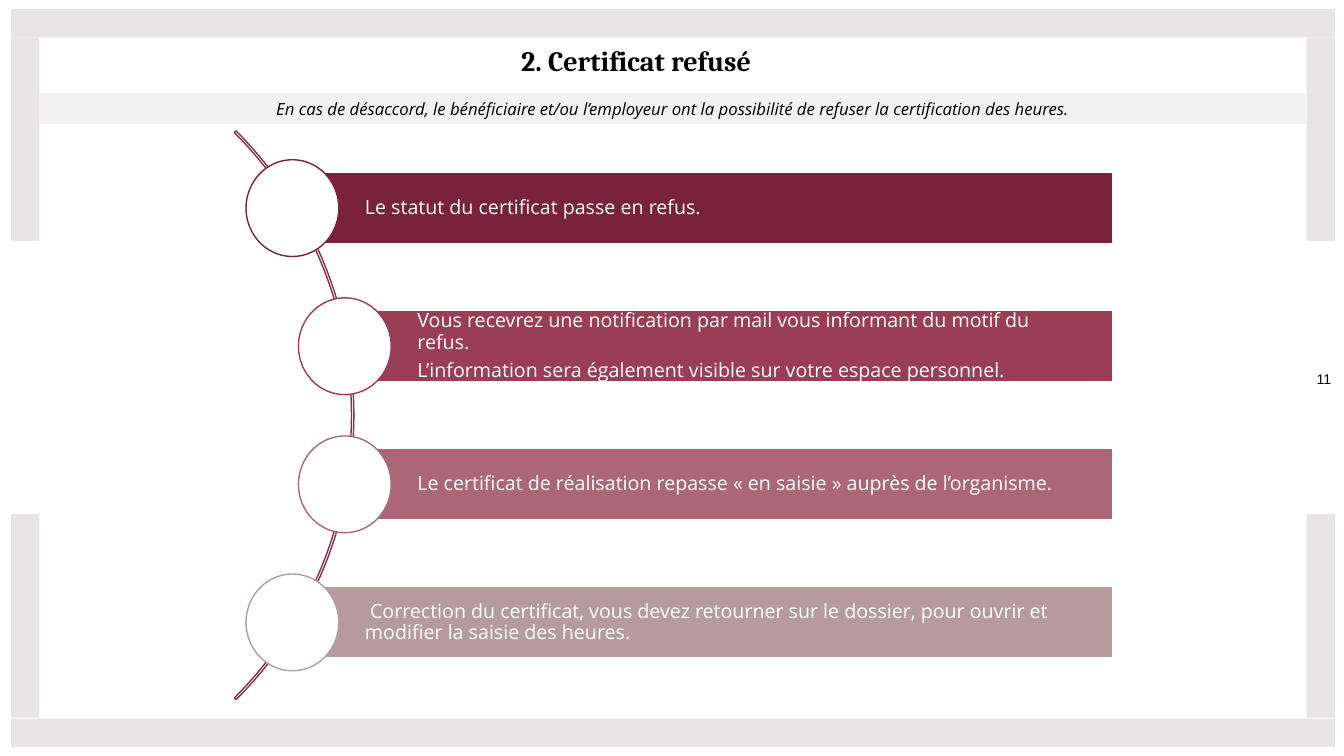
from dataclasses import dataclass
from typing import Any, Optional

from pptx import Presentation
from pptx.dml.color import RGBColor
from pptx.enum.shapes import MSO_SHAPE
from pptx.enum.text import MSO_ANCHOR, PP_ALIGN
from pptx.util import Inches, Pt

RECTANGLE, OVAL, BLOCK_ARC = MSO_SHAPE.RECTANGLE, MSO_SHAPE.OVAL, MSO_SHAPE.BLOCK_ARC
TOP, MIDDLE = MSO_ANCHOR.TOP, MSO_ANCHOR.MIDDLE
LEFT, CENTER = PP_ALIGN.LEFT, PP_ALIGN.CENTER


@dataclass(frozen=True)
class Theme:
    frame: str = "E9E4E5"
    banner: str = "F2F2F2"
    white: str = "FFFFFF"
    black: str = "000000"
    arc: str = "873146"
    heading_font: str = "Cambria"
    body_font: str = "Open Sans"
    number_font: str = "Arial"
    title_size: int = 20
    step_size: int = 14
    banner_size: int = 12
    number_size: int = 10


THEME = Theme()


@dataclass(frozen=True)
class Box:
    left: float
    top: float
    width: float
    height: float

    def lengths(self) -> list[int]:
        return [Inches(value) for value in (self.left, self.top, self.width, self.height)]


@dataclass(frozen=True)
class TextStyle:
    font: dict[str, Any]
    color: str
    paragraph: dict[str, Any]
    anchor: Any = TOP
    margins: tuple[float, float, float, float] = (0.1, 0.05, 0.1, 0.05)


@dataclass(frozen=True)
class Step:
    bar_left: float
    color: str
    lines: tuple[str, ...]


TITLE_STYLE = TextStyle(
    {"name": THEME.heading_font, "size": Pt(THEME.title_size), "bold": True},
    THEME.black, {"alignment": CENTER})
BANNER_STYLE = TextStyle(
    {"name": THEME.body_font, "size": Pt(THEME.banner_size), "italic": True},
    THEME.black, {"alignment": CENTER}, MIDDLE)
NUMBER_STYLE = TextStyle(
    {"name": THEME.number_font, "size": Pt(THEME.number_size)},
    THEME.black, {"alignment": CENTER}, MIDDLE, (0, 0, 0, 0))
STEP_STYLE = TextStyle(
    {"name": THEME.body_font, "size": Pt(THEME.step_size)}, THEME.white,
    {"alignment": LEFT, "line_spacing": 0.9, "space_after": Pt(5)},
    MIDDLE, (0.72, 0.04, 0.04, 0.04))

OUTER_LEFT, INNER_LEFT, INNER_RIGHT = 0.11, 0.39, 12.96
BAND, SIDE_HEIGHT = 0.28, 2.02
FRAME = [Box(OUTER_LEFT, top, 13.13, BAND) for top in (0.09, 7.13)] + [
    Box(left, top, BAND, SIDE_HEIGHT)
    for left in (OUTER_LEFT, INNER_RIGHT) for top in (0.37, 5.1)]

BAR_RIGHT, BAR_HEIGHT = 11.04, 0.71
FIRST_BAR_TOP, STEP_PITCH = 1.71, 1.37
CIRCLE_WIDTH, CIRCLE_HEIGHT = 0.92, 0.96
OUTER_STEP, INNER_STEP = 2.9, 3.42
STEPS = [
    Step(OUTER_STEP, "79223A", ("Le statut du certificat passe en refus.",)),
    Step(INNER_STEP, "993E54", (
        "Vous recevrez une notification par mail vous informant du motif du \trefus.",
        "L’information sera également visible sur votre espace personnel.")),
    Step(INNER_STEP, "AC6775", (
        "Le certificat de réalisation repasse « en saisie » auprès de l’organisme.",)),
    Step(OUTER_STEP, "B59A9E", (
        " Correction du certificat, vous devez retourner sur le dossier, "
        "pour ouvrir et modifier la saisie des heures.",)),
]


def set_attributes(target: Any, values: dict[str, Any]) -> None:
    for name, value in values.items():
        setattr(target, name, value)


def write_text(shape: Any, lines: tuple[str, ...], style: TextStyle) -> None:
    frame = shape.text_frame
    left, top, right, bottom = (Inches(margin) for margin in style.margins)
    set_attributes(frame, {
        "word_wrap": True, "vertical_anchor": style.anchor,
        "margin_left": left, "margin_top": top,
        "margin_right": right, "margin_bottom": bottom})
    for index, line in enumerate(lines):
        paragraph = frame.paragraphs[0] if index == 0 else frame.add_paragraph()
        set_attributes(paragraph, style.paragraph)
        run = paragraph.add_run()
        run.text = line
        set_attributes(run.font, style.font)
        run.font.color.rgb = RGBColor.from_string(style.color)


def add_text(slide: Any, box: Box, line: str, style: TextStyle) -> None:
    write_text(slide.shapes.add_textbox(*box.lengths()), (line,), style)


def add_figure(slide: Any, kind: Any, box: Box, fill: Optional[str],
               line: Optional[str] = None) -> Any:
    """Add a preset shape without shadow; None means no fill or no line."""
    shape = slide.shapes.add_shape(kind, *box.lengths())
    shape.shadow.inherit = False
    if fill:
        shape.fill.solid()
        shape.fill.fore_color.rgb = RGBColor.from_string(fill)
    else:
        shape.fill.background()
    if line:
        shape.line.color.rgb = RGBColor.from_string(line)
        shape.line.width = Pt(1)
    else:
        shape.line.fill.background()
    return shape


def add_step(slide: Any, step: Step, top: float) -> None:
    """Add a bar with its text and the circle centred on the bar's left end."""
    bar_box = Box(step.bar_left, top, BAR_RIGHT - step.bar_left, BAR_HEIGHT)
    bar = add_figure(slide, RECTANGLE, bar_box, step.color, THEME.white)
    write_text(bar, step.lines, STEP_STYLE)
    circle_box = Box(step.bar_left - CIRCLE_WIDTH / 2,
                     top + (BAR_HEIGHT - CIRCLE_HEIGHT) / 2,
                     CIRCLE_WIDTH, CIRCLE_HEIGHT)
    add_figure(slide, OVAL, circle_box, THEME.white, step.color)


def main() -> None:
    presentation = Presentation()
    presentation.slide_width = Inches(13.33)
    presentation.slide_height = Inches(7.5)
    slide = presentation.slides.add_slide(presentation.slide_layouts[6])

    for box in FRAME:
        add_figure(slide, RECTANGLE, box, THEME.frame)
    add_text(slide, Box(INNER_RIGHT, 2.51, 0.34, 2.49), "11", NUMBER_STYLE)
    add_text(slide, Box(1.17, 0.38, 10.28, 0.44), "2. Certificat refusé", TITLE_STYLE)

    banner_box = Box(INNER_LEFT, 0.93, INNER_RIGHT - INNER_LEFT, 0.3)
    banner = add_figure(slide, RECTANGLE, banner_box, THEME.banner)
    write_text(banner, (
        "En cas de désaccord, le bénéficiaire et/ou l’employeur ont la possibilité "
        "de refuser la certification des heures.",), BANNER_STYLE)

    arc = add_figure(slide, BLOCK_ARC, Box(-4.47, 0.13, 7.98, 7.98), None, THEME.arc)
    for index, value in enumerate((189, 27, 0.003)):
        arc.adjustments[index] = value

    for index, step in enumerate(STEPS):
        add_step(slide, step, FIRST_BAR_TOP + index * STEP_PITCH)
    presentation.save("out.pptx")


if __name__ == "__main__":
    main()
